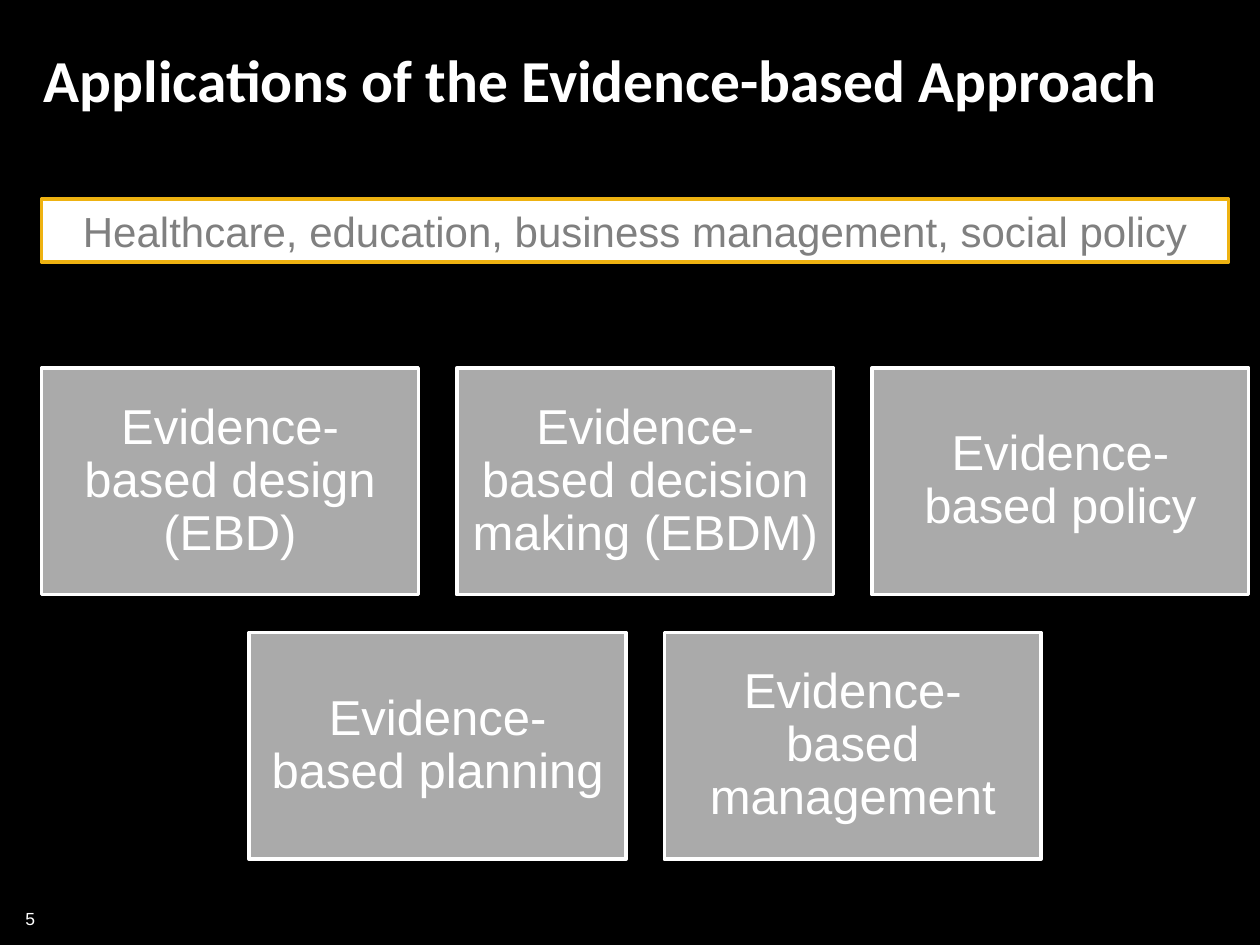
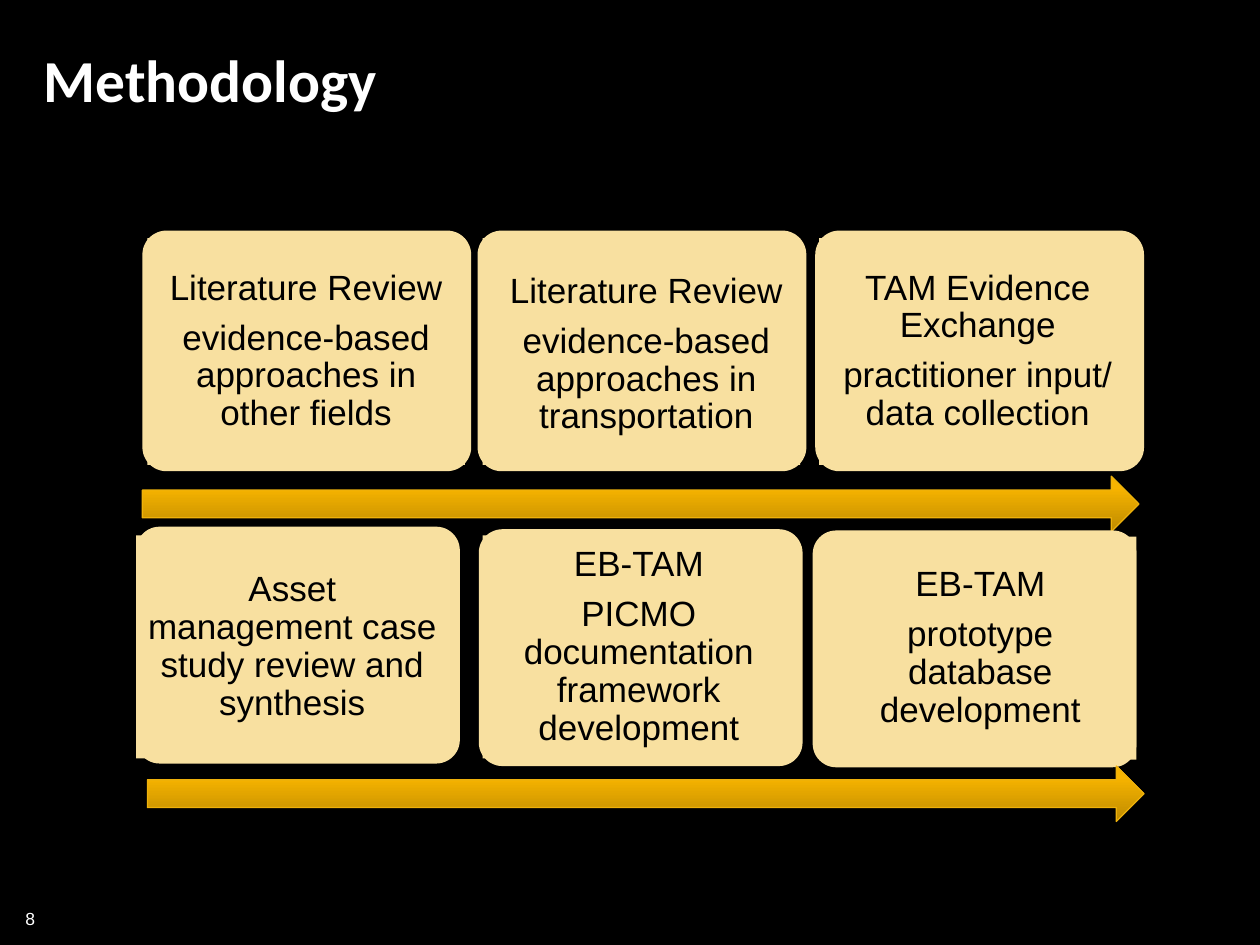
from dataclasses import dataclass

from pptx import Presentation
from pptx.dml.color import RGBColor
from pptx.enum.shapes import MSO_SHAPE
from pptx.enum.text import MSO_ANCHOR, PP_ALIGN
from pptx.util import Inches, Pt

COLUMNS, ROWS = 100, 75


@dataclass(frozen=True)
class Theme:
    background: str = "000000"
    light: str = "FFFFFF"
    dark: str = "000000"
    muted: str = "808080"
    tile: str = "AAAAAA"
    band_edge: str = "EEB211"
    step: str = "F8E0A0"
    arrow_edge: str = "EEB10B"
    arrow_bottom: str = "BE8B00"
    arrow_top: str = "F7B400"
    heading_font: str = "Calibri"
    body_font: str = "Arial"
    title_size: int = 34
    tile_size: int = 28
    band_size: int = 24
    step_size: int = 20
    number_size: int = 10


class Deck:
    def __init__(self, theme):
        self.theme = theme
        self.presentation = Presentation()
        self.presentation.slide_width = Inches(10)
        self.presentation.slide_height = Inches(7.5)
        self.column = self.presentation.slide_width / COLUMNS
        self.row = self.presentation.slide_height / ROWS
        self.slide = None

    def start_slide(self, title, number):
        self.slide = self.presentation.slides.add_slide(self.presentation.slide_layouts[6])
        fill = self.slide.background.fill
        fill.solid()
        fill.fore_color.rgb = RGBColor.from_string(self.theme.background)
        self.label((0.2, 71.6, 4.4, 2.7), [number], self.theme.number_size,
                   self.theme.light, margins=(0, 0.5), anchor=MSO_ANCHOR.TOP)
        self.label((2.5, 0, 95.8, 12.5), [title], self.theme.title_size, self.theme.light,
                   font=self.theme.heading_font, bold=True, align=PP_ALIGN.LEFT)

    def place(self, box):
        left, top, width, height = box
        return (round(left * self.column), round(top * self.row),
                round(width * self.column), round(height * self.row))

    def set_text(self, holder, paragraphs, size, color, font=None, bold=False,
                 align=PP_ALIGN.CENTER, anchor=MSO_ANCHOR.MIDDLE, margins=(1, 0.5),
                 spacing=1, gap=0):
        frame = holder.text_frame
        frame.word_wrap = True
        frame.vertical_anchor = anchor
        frame.margin_left = frame.margin_right = round(margins[0] * self.column)
        frame.margin_top = frame.margin_bottom = round(margins[1] * self.row)
        for index, words in enumerate(paragraphs):
            paragraph = frame.add_paragraph() if index else frame.paragraphs[0]
            paragraph.alignment = align
            paragraph.line_spacing = spacing
            paragraph.space_after = Pt(gap * size)
            run = paragraph.add_run()
            run.text = words
            run.font.name = font or self.theme.body_font
            run.font.size = Pt(size)
            run.font.bold = bold
            run.font.color.rgb = RGBColor.from_string(color)

    def label(self, box, paragraphs, size, color, **style):
        self.set_text(self.slide.shapes.add_textbox(*self.place(box)),
                      paragraphs, size, color, **style)

    def block(self, box, fill, edge=None, edge_width=2, preset=MSO_SHAPE.RECTANGLE):
        shape = self.slide.shapes.add_shape(preset, *self.place(box))
        shape.shadow.inherit = False
        shape.fill.solid()
        shape.fill.fore_color.rgb = RGBColor.from_string(fill)
        if edge:
            shape.line.color.rgb = RGBColor.from_string(edge)
            shape.line.width = Pt(edge_width)
        else:
            shape.line.fill.background()
        return shape

    def band(self, box, words):
        strip = self.block(box, self.theme.light, self.theme.band_edge)
        self.set_text(strip, [words], self.theme.band_size, self.theme.muted,
                      anchor=MSO_ANCHOR.TOP)

    def tile(self, box, words):
        tile = self.block(box, self.theme.tile, self.theme.light)
        self.set_text(tile, [words], self.theme.tile_size, self.theme.light,
                      margins=(1.2, 1.2), spacing=0.9, gap=0.35)

    def step(self, card, panel, paragraphs, text_box=None):
        rounded = self.block(card, self.theme.step, preset=MSO_SHAPE.ROUNDED_RECTANGLE)
        rounded.adjustments[0] = 0.1
        holder = self.block(panel, self.theme.step)
        if text_box:
            holder = self.slide.shapes.add_textbox(*self.place(text_box))
        self.set_text(holder, paragraphs, self.theme.step_size, self.theme.dark,
                      margins=(0.7, 0.7), spacing=0.9, gap=0.35)

    def arrow(self, left, top):
        arrow = self.block((left, top, 79.1, 4.4), self.theme.arrow_top,
                           self.theme.arrow_edge, 0.75, MSO_SHAPE.RIGHT_ARROW)
        arrow.fill.gradient()
        arrow.fill.gradient_angle = 90
        shades = ((0, self.theme.arrow_bottom), (0.8, self.theme.arrow_top))
        for stop, (position, color) in zip(arrow.fill.gradient_stops, shades):
            stop.position = position
            stop.color.rgb = RGBColor.from_string(color)


def build_applications(deck):
    deck.start_slide("Applications of the Evidence-based Approach", "5")
    fields = (
        ("Evidence-based design (EBD)", "Evidence-based decision making (EBDM)",
         "Evidence-based policy"),
        ("Evidence-based planning", "Evidence-based management"),
    )
    left, top, width, height, gap = 3.3, 29.2, 29.9, 18, 3.05
    pitch = width + gap
    for row, names in enumerate(fields):
        start = left + (len(fields[0]) - len(names)) * pitch / 2
        for column, name in enumerate(names):
            deck.tile((start + column * pitch, top + row * (height + 3), width, height), name)
    deck.band((3.3, 15.8, 94.2, 5), "Healthcare, education, business management, social policy")


def build_methodology(deck):
    deck.start_slide("Methodology", "8")
    deck.arrow(11.3, 37.8)
    review = "Literature Review"
    card, panel = (26.1, 19.1), (25.2, 18)
    lower_card, lower_panel = (25.7, 18.8), (24.8, 17.7)
    deck.step((11.3, 18.3, *card), (11.7, 18.9, *panel),
              [review, "evidence-based approaches in other fields"])
    deck.step((37.9, 18.3, *card), (38.3, 18.9, *panel),
              [review, "evidence-based approaches in transportation"],
              text_box=(38.9, 19.3, *lower_panel))
    deck.step((64.7, 18.3, *card), (65, 18.9, *panel),
              ["TAM Evidence Exchange", "practitioner input/ data collection"])
    deck.step((10.8, 41.8, *lower_card), (10.8, 42.5, *lower_panel),
              ["Asset management case study review and synthesis"])
    deck.step((38, 42, *lower_card), (38.3, 42.5, *lower_panel),
              ["EB-TAM", "PICMO documentation framework development"])
    deck.step((64.5, 42.1, *lower_card), (65.4, 42.6, *lower_panel),
              ["EB-TAM", "prototype database development"])
    deck.arrow(11.7, 60.8)


def main():
    deck = Deck(Theme())
    build_applications(deck)
    build_methodology(deck)
    deck.presentation.save("out.pptx")


if __name__ == "__main__":
    main()
